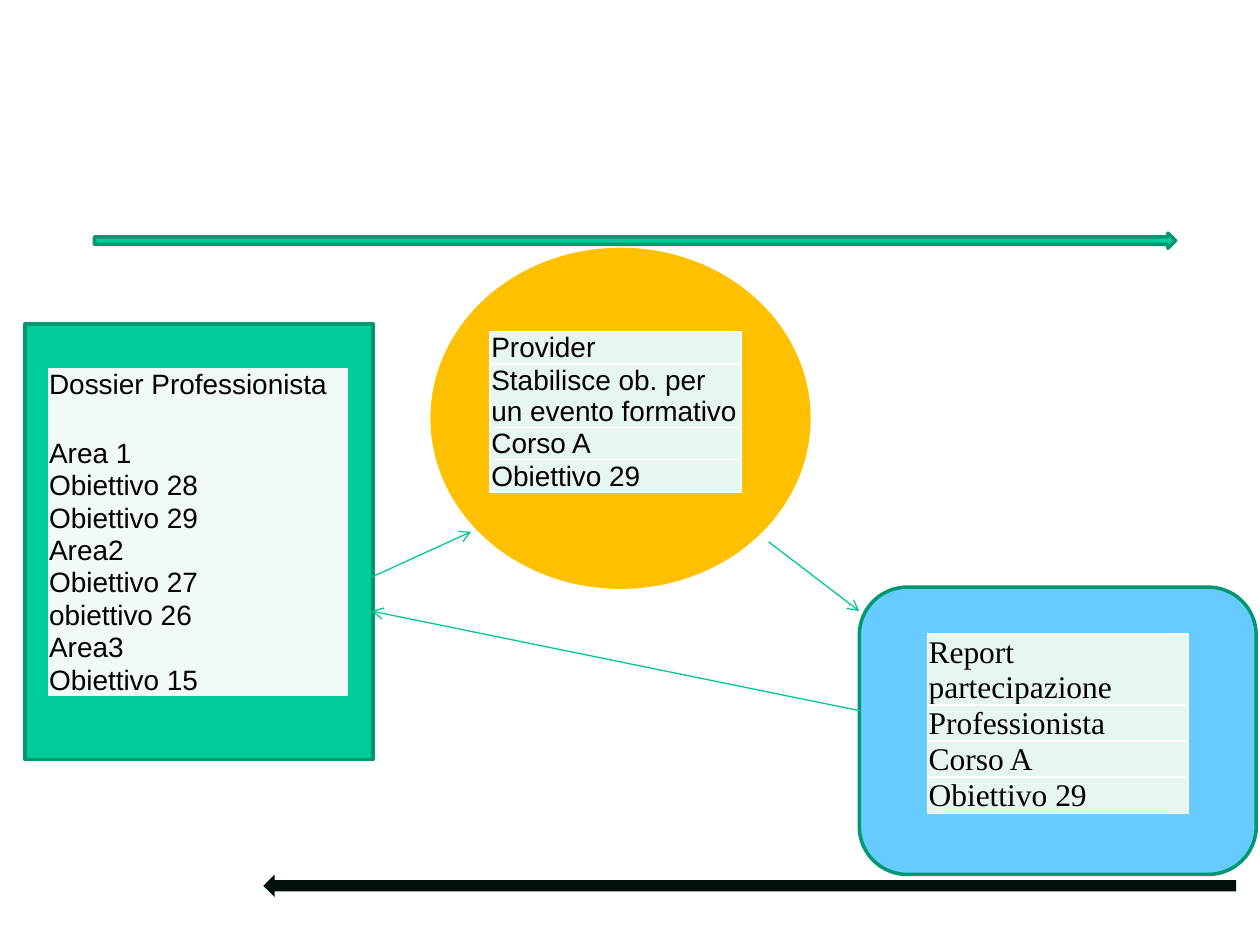
from pptx import Presentation
from pptx.dml.color import RGBColor
from pptx.enum.shapes import MSO_CONNECTOR, MSO_SHAPE
from pptx.enum.text import MSO_ANCHOR
from pptx.oxml.ns import qn
from pptx.oxml.xmlchemy import OxmlElement
from pptx.util import Pt

EMU_PER_PX = 9144
GREEN = RGBColor(0x00, 0xCC, 0x99)
DARK_GREEN = RGBColor(0x00, 0x97, 0x71)
LINK_GREEN = RGBColor(0x00, 0xC8, 0x96)
AMBER = RGBColor(0xFF, 0xC0, 0x00)
SKY = RGBColor(0x66, 0xCC, 0xFF)
PALE = RGBColor(0xF1, 0xFA, 0xF6)
MINT = RGBColor(0xE7, 0xF6, 0xEF)
BLACK = RGBColor(0x00, 0x00, 0x00)
INK = RGBColor(0x00, 0x0F, 0x0B)
WHITE = RGBColor(0xFF, 0xFF, 0xFF)

DOSSIER = ["Dossier Professionista", "", "Area 1", "Obiettivo 28", "Obiettivo 29",
           "Area2", "Obiettivo 27", "obiettivo 26", "Area3", "Obiettivo 15"]
PROVIDER = ["Provider", "Stabilisce ob. per un evento formativo", "Corso A", "Obiettivo 29"]
REPORT = ["Report partecipazione", "Professionista", "Corso A", "Obiettivo 29"]


def px(length):
    """Turn a length in px into EMU."""
    return round(length * EMU_PER_PX)


def write(frame, text, font="Arial", size=16, color=BLACK):
    """Write one formatted span into the first paragraph of a frame."""
    span = frame.paragraphs[0].add_run()
    span.text = text
    span.font.name = font
    span.font.size = Pt(size)
    span.font.color.rgb = color


def add_block(page, preset, box, fill, line):
    """Add a filled preset shape with an outline and no shadow."""
    block = page.shapes.add_shape(preset, *map(px, box))
    block.shadow.inherit = False
    block.fill.solid()
    block.fill.fore_color.rgb = fill
    block.line.color.rgb = line
    block.line.width = Pt(2)
    return block


def set_borders(cell, color):
    """Draw all four borders of a cell, or hide them when color is None."""
    properties = cell._tc.get_or_add_tcPr()
    for side in ("a:lnL", "a:lnR", "a:lnT", "a:lnB"):
        border = OxmlElement(side)
        border.set("w", str(Pt(1)))
        fill = OxmlElement("a:solidFill" if color else "a:noFill")
        if color:
            value = OxmlElement("a:srgbClr")
            value.set("val", str(color))
            fill.append(value)
        border.append(fill)
        properties.append(border)


def add_list(page, box, rows, fill, border=None, **text_format):
    """Add a one-column table with one row for each text."""
    left, top, width, row_height = box
    table = page.shapes.add_table(len(rows), 1, px(left), px(top), px(width),
                                  px(row_height * len(rows))).table
    table.first_row = False
    table.horz_banding = False
    for index, text in enumerate(rows):
        cell = table.cell(index, 0)
        cell.margin_left = cell.margin_right = cell.margin_top = px(1)
        cell.margin_bottom = 0
        cell.vertical_anchor = MSO_ANCHOR.BOTTOM
        set_borders(cell, border)
        cell.fill.solid()
        cell.fill.fore_color.rgb = fill
        write(cell.text_frame, text, **text_format)


def add_dossier(page, left, top):
    """Place the professional's dossier card."""
    add_block(page, MSO_SHAPE.RECTANGLE, (left, top, 276, 346), GREEN, DARK_GREEN)
    add_list(page, (left + 18, top + 35, 238, 21), DOSSIER, PALE)


def add_provider(page, left, top):
    """Place the provider ellipse."""
    add_block(page, MSO_SHAPE.OVAL, (left, top, 299, 268), AMBER, AMBER)
    add_list(page, (left + 46, top + 65, 199, 21), PROVIDER, MINT, WHITE)


def add_report(page, left, top):
    """Place the participation report card."""
    add_block(page, MSO_SHAPE.ROUNDED_RECTANGLE, (left, top, 315, 228), SKY, DARK_GREEN)
    add_list(page, (left + 54, top + 37, 207, 21), REPORT, MINT, WHITE,
             font="Times New Roman", size=18)


def add_link(page, start, end):
    """Add a thin connector with an open arrowhead at its end."""
    link = page.shapes.add_connector(MSO_CONNECTOR.STRAIGHT, *map(px, start + end))
    link.line.color.rgb = LINK_GREEN
    link.line.width = Pt(0.75)
    head = OxmlElement("a:tailEnd")
    head.set("type", "arrow")
    properties = link.element.spPr
    properties.find(qn("a:ln")).append(head)
    properties.append(OxmlElement("a:effectLst"))


def add_flow_arrows(page):
    """Place the forward arrow above and the return arrow below."""
    add_block(page, MSO_SHAPE.RIGHT_ARROW, (75, 185, 858, 12), GREEN, DARK_GREEN)
    back = add_block(page, MSO_SHAPE.RIGHT_ARROW, (209, 694, 772, 18), INK, INK)
    back.line.fill.background()
    back.rotation = 180


def main():
    """Build the slide and save the deck."""
    deck = Presentation()
    deck.slide_width, deck.slide_height = px(1000), px(750)
    page = deck.slides.add_slide(deck.slide_layouts[6])
    add_report(page, 682, 466)
    add_provider(page, 343, 198)
    add_dossier(page, 20, 257)
    add_link(page, (610, 430), (682, 485))
    add_link(page, (682, 564), (295, 485))
    add_link(page, (295, 458), (374, 422))
    add_flow_arrows(page)
    deck.save("out.pptx")


if __name__ == "__main__":
    main()
